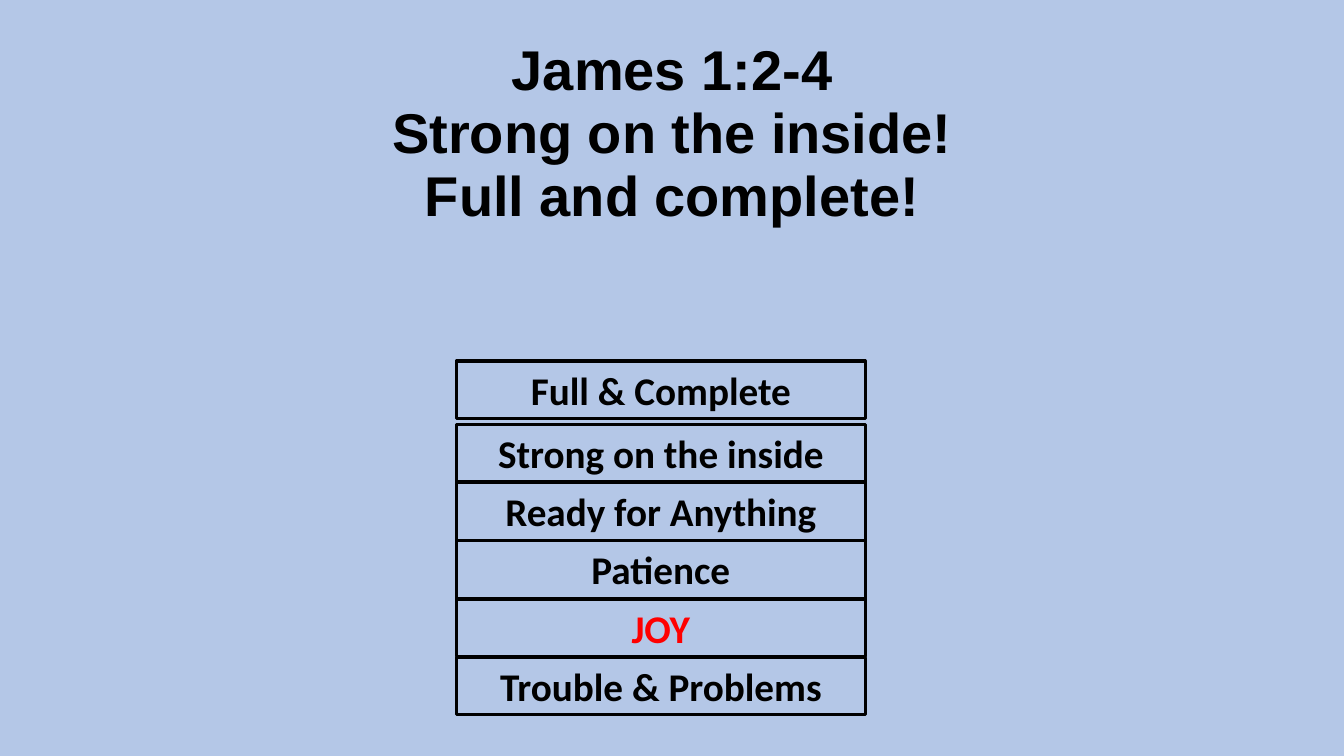
import pptx
import pptx.util
import pptx.dml.color
import pptx.enum.shapes
import pptx.enum.text
from dataclasses import dataclass

Pt = pptx.util.Pt
Color = pptx.dml.color.RGBColor.from_string
Align = pptx.enum.text.PP_ALIGN
Anchor = pptx.enum.text.MSO_ANCHOR
AutoSize = pptx.enum.text.MSO_AUTO_SIZE


@dataclass(frozen=True)
class Theme:
    background: str = "B4C7E7"
    ink: str = "000000"
    accent: str = "FF0000"
    heading_font: str = "Arial"
    step_font: str = "Calibri"
    heading_size: int = 40
    step_size: int = 28


theme = Theme()


def style_paragraph(paragraph, font_name, size, color):
    paragraph.alignment = Align.CENTER
    for run in paragraph.runs:
        run.font.name = font_name
        run.font.size = Pt(size)
        run.font.bold = True
        run.font.color.rgb = Color(color)


# Slide and background
deck = pptx.Presentation()
deck.slide_width, deck.slide_height = Pt(960), Pt(540)
slide = deck.slides.add_slide(deck.slide_layouts[0])
slide.background.fill.solid()
slide.background.fill.fore_color.rgb = Color(theme.background)
subtitle = slide.placeholders[1].element
subtitle.getparent().remove(subtitle)

# Heading, held clear of the steps by its bottom inset
heading = slide.shapes.title
heading.left, heading.top = Pt(0), Pt(24.5)
heading.width, heading.height = Pt(960), Pt(233.3)
verse = heading.text_frame
verse.text = "James 1:2-4\nStrong on the inside!\nFull and complete!"
verse.auto_size = AutoSize.NONE
verse.vertical_anchor = Anchor.BOTTOM
verse.margin_bottom = Pt(94)
for line in verse.paragraphs:
    line.line_spacing = 0.94
    style_paragraph(line, theme.heading_font, theme.heading_size, theme.ink)

# Stack of steps: five touching boxes, with the top one set slightly apart
steps = ["Full & Complete", "Strong on the inside", "Ready for Anything",
         "Patience", "JOY", "Trouble & Problems"]
stack_top, step_pitch, top_gap = 261.5, 41.6, 3.7
for index, wording in enumerate(steps):
    top = stack_top + index * step_pitch - (top_gap if index == 0 else 0)
    step = slide.shapes.add_shape(
        pptx.enum.shapes.MSO_SHAPE.RECTANGLE,
        Pt(326), Pt(top), Pt(292), Pt(41.2))
    step.shadow.inherit = False
    step.fill.background()
    step.line.color.rgb = Color(theme.ink)
    step.line.width = Pt(2.25)
    step.text_frame.text = wording
    step.text_frame.word_wrap = True
    step.text_frame.auto_size = AutoSize.SHAPE_TO_FIT_TEXT
    step.text_frame.vertical_anchor = Anchor.TOP
    style_paragraph(step.text_frame.paragraphs[0], theme.step_font, theme.step_size,
                    theme.accent if wording == "JOY" else theme.ink)

deck.save("out.pptx")
